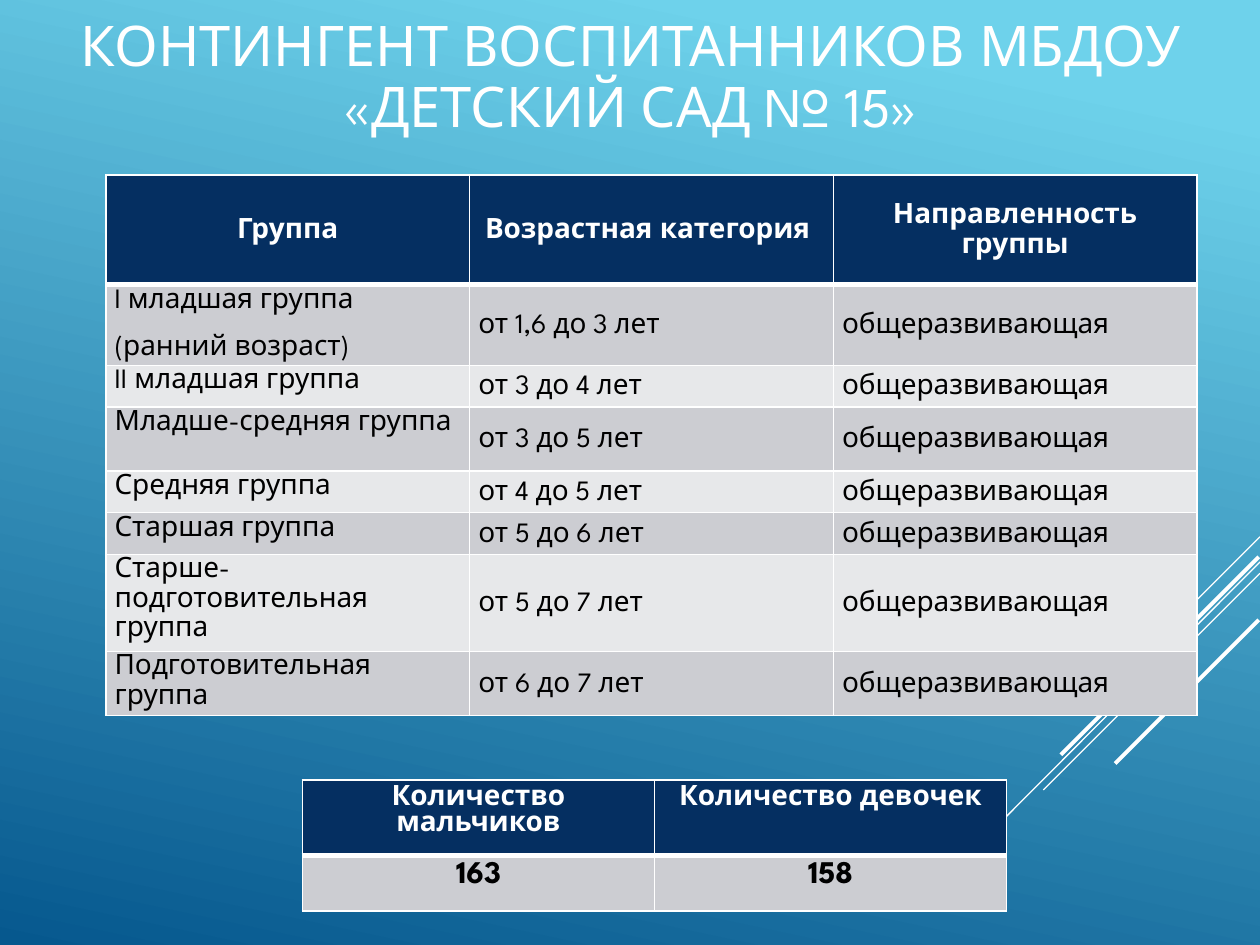
from pptx import Presentation, util as u
from pptx.dml.color import RGBColor
from pptx.enum import shapes, text
from pptx.oxml import ns
from lxml import etree

FONT = "League Spartan"
WHITE = RGBColor(0xFF, 0xFF, 0xFF)
BLACK = RGBColor(0, 0, 0)
NAVY = RGBColor(0x05, 0x2F, 0x61)
GREY = RGBColor(0xCC, 0xCD, 0xD2)
PALE = RGBColor(0xE7, 0xE8, 0xEA)
SKY = RGBColor(0x6E, 0xD2, 0xEB)
DEEP = RGBColor(0x06, 0x58, 0x8E)

# Diagonal lines: start x, y, end x, y, width in points
RAYS = [
    (10, 4.26, 9.17, 5.09, 0.75),
    (10, 4.46, 7.3, 7.17, 0.75),
    (10, 4.55, 8.28, 6.27, 0.75),
    (9.99, 4.42, 8.42, 5.99, 2.25),
    (9.99, 4.92, 8.85, 6.06, 2.25),
]

HEADINGS = ["Группа", "Возрастная категория ", "Направленность группы"]
GROUPS = [
    ("I младшая группа\n(ранний возраст)", "от 1,6 до 3 лет"),
    ("II младшая группа", "от 3 до 4 лет"),
    ("Младше-средняя группа", "от 3 до 5 лет"),
    ("Средняя группа", "от 4 до 5 лет"),
    ("Старшая группа", "от 5 до 6 лет"),
    ("Старше-подготовительная группа", "от 5 до 7 лет"),
    ("Подготовительная группа", "от 6 до 7 лет"),
]
FOCUS = "общеразвивающая"


def write(frame, words, size=16, color=BLACK, bold=False, centered=False,
          spacing=None, after=None):
    """Fill a text frame, one paragraph for each line of words."""
    frame.text = words
    for para in frame.paragraphs:
        para.alignment = text.PP_ALIGN.CENTER if centered else text.PP_ALIGN.LEFT
        if spacing is not None:
            para.line_spacing = spacing
        if after is not None:
            para.space_after = u.Pt(after)
        for span in para.runs:
            span.font.name = FONT
            span.font.size = u.Pt(size)
            span.font.bold = bold
            span.font.color.rgb = color


def set_borders(cell, top=1, bottom=1):
    properties = cell._tc.get_or_add_tcPr()
    for side, points in (("L", 1), ("R", 1), ("T", top), ("B", bottom)):
        line = etree.SubElement(properties, ns.qn(f"a:ln{side}"), w=str(u.Pt(points)))
        fill = etree.SubElement(line, ns.qn("a:solidFill"))
        etree.SubElement(fill, ns.qn("a:srgbClr"), val=str(WHITE))


class SlideBuilder:
    def __init__(self, deck):
        self.page = deck.slides.add_slide(deck.slide_layouts[5])

    def background(self, start, end, angle):
        fill = self.page.background.fill
        fill.gradient()
        fill.gradient_angle = 360 - angle
        for stop, color, position in zip(fill.gradient_stops, (start, end), (0.1, 1)):
            stop.color.rgb = color
            stop.position = position

    def ray(self, x1, y1, x2, y2, width):
        line = self.page.shapes.add_connector(
            shapes.MSO_CONNECTOR.STRAIGHT, *map(u.Inches, (x1, y1, x2, y2)))
        line.line.color.rgb = WHITE
        line.line.width = u.Pt(width)
        etree.SubElement(line._element.spPr, ns.qn("a:effectLst"))

    def title(self, words, left, top, width, height):
        box = self.page.shapes.title
        box.left, box.top, box.width, box.height = map(
            u.Inches, (left, top, width, height))
        box.text_frame.vertical_anchor = text.MSO_ANCHOR.MIDDLE
        write(box.text_frame, words, size=32, color=WHITE, centered=True, spacing=0.9)

    def table(self, rows, left, top, width, heights, style):
        """style(row, column) gives the text format, anchor and side margin."""
        frame = self.page.shapes.add_table(
            len(rows), len(rows[0]),
            *map(u.Inches, (left, top, width, sum(heights))))
        grid = frame.table
        for row, height in zip(grid.rows, heights):
            row.height = u.Inches(height)
        for i, words in enumerate(rows):
            for j, word in enumerate(words):
                cell = grid.cell(i, j)
                look, middle, margins = style(i, j)
                write(cell.text_frame, word, **look)
                if middle:
                    cell.vertical_anchor = text.MSO_ANCHOR.MIDDLE
                if margins:
                    cell.margin_left = cell.margin_right = u.Inches(margins)
                    cell.margin_top = cell.margin_bottom = 0
                set_borders(cell, top=3 if i == 1 else 1, bottom=3 if i == 0 else 1)
                cell.fill.solid()
                cell.fill.fore_color.rgb = NAVY if i == 0 else GREY if i % 2 else PALE


def group_style(row, column):
    head = row == 0
    look = dict(color=WHITE if head else BLACK, bold=head, centered=head,
                spacing=1.15, after=10)
    return look, head or column > 0, 0.07


def count_style(row, column):
    head = row == 0
    look = dict(size=16 if head else 18, color=WHITE if head else BLACK,
                bold=True, centered=True)
    return look, False, None


def main():
    deck = Presentation()
    deck.slide_width, deck.slide_height = u.Inches(10), u.Inches(7.5)
    slide = SlideBuilder(deck)

    # Backdrop
    slide.background(SKY, DEEP, 102)
    for ray in RAYS:
        slide.ray(*ray)

    # Title
    slide.title("КОНТИНГЕНТ ВОСПИТАННИКОВ МБДОУ «ДЕТСКИЙ САД № 15»", 0.51, 0, 9, 1.25)

    # Groups by age
    rows = [HEADINGS] + [(group, age, FOCUS) for group, age in GROUPS]
    slide.table(rows, 0.84, 1.39, 8.66,
                [0.87, 0.64, 0.33, 0.51, 0.33, 0.33, 0.77, 0.51], group_style)

    # Boys and girls
    slide.table([("Количество мальчиков", "Количество девочек"), ("163", "158")],
                2.4, 6.19, 5.59, [0.6, 0.44], count_style)

    deck.save("out.pptx")


if __name__ == "__main__":
    main()
